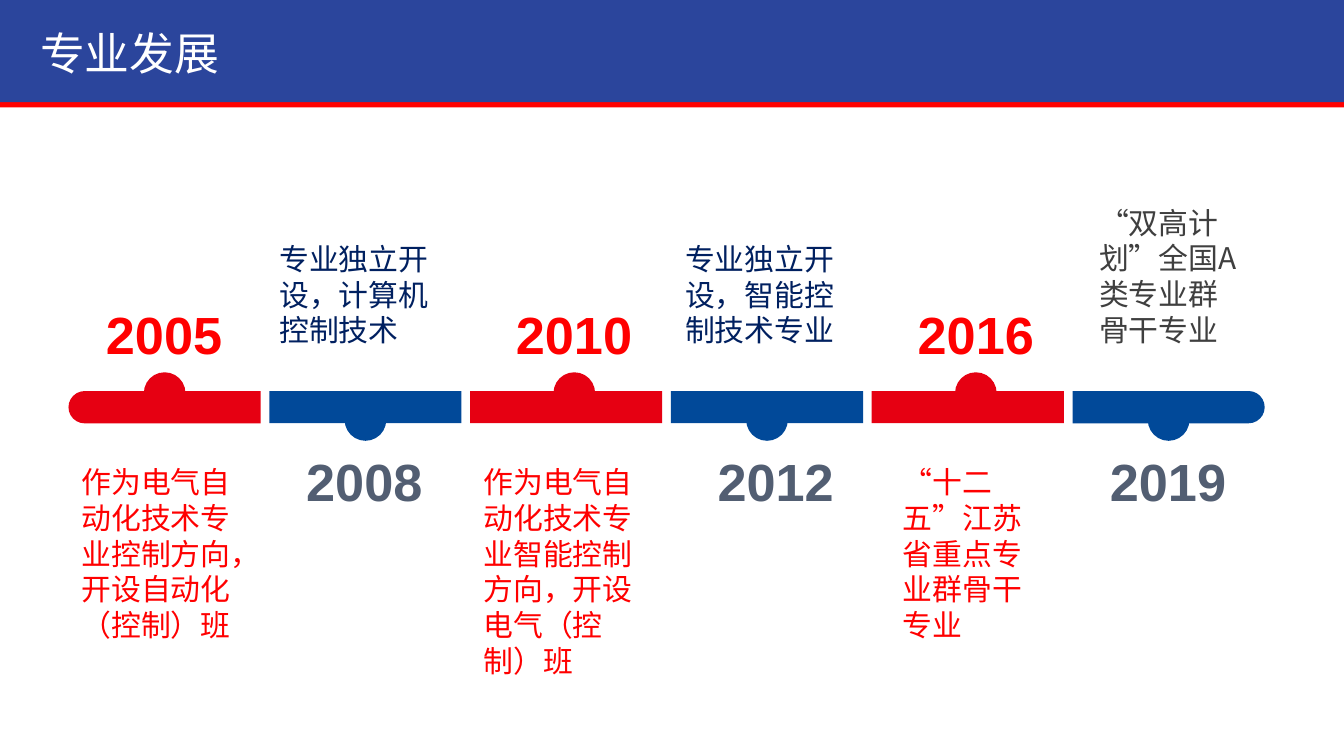
from pptx import Presentation
from pptx.dml.color import RGBColor
from pptx.enum.shapes import MSO_SHAPE
from pptx.oxml.ns import qn
from pptx.util import Inches, Pt
from lxml import etree

RECT = MSO_SHAPE.RECTANGLE
ROUND_END = MSO_SHAPE.ROUND_2_SAME_RECTANGLE
OVAL = MSO_SHAPE.OVAL
LATIN, CHINESE = "Arial", "Noto Sans CJK SC"
COLORS = {
    "header": "2B459C", "rule": "FF0000", "white": "FFFFFF",
    "red_bar": "E60012", "blue_bar": "014999",
    "red": "FF0000", "slate": "525E72", "navy": "002060", "gray": "3F3F3F",
}
BAR_WIDTH, BAR_HEIGHT, DOT_SIZE = 1.43, 0.24, 0.31

MILESTONES = [
    ("2005", 0.18, 0, "作为电气自动化技术专业控制方向，开设自动化（控制）班", 0, 0.49, 1.43, 1.45, "red"),
    ("2008", 1.67, 0, "专业独立开设，计算机控制技术", 1.47, -1.17, 1.43, 0.91, "navy"),
    ("2010", 3.23, 0.06, "作为电气自动化技术专业智能控制方向，开设电气（控制）班", 2.99, 0.49, 1.43, 1.72, "red"),
    ("2012", 4.73, 0, "专业独立开设，智能控制技术专业", 4.49, -1.17, 1.43, 0.91, "navy"),
    ("2016", 6.22, 0.06, "“十二五”江苏省重点专业群骨干专业", 6.11, 0.49, 1.3, 1.18, "red"),
    ("2019", 7.65, 0, "“双高计划”全国A类专业群骨干专业", 7.57, -1.44, 1.25, 1.18, "gray"),
]


def add_block(page, kind, left, top, width, height, color):
    block = page.shapes.add_shape(kind, Inches(left), Inches(top), Inches(width), Inches(height))
    block.shadow.inherit = False
    block.fill.solid()
    block.fill.fore_color.rgb = RGBColor.from_string(COLORS[color])
    block.line.fill.background()
    return block


def add_text(page, text, left, top, width, height, size, color, font, bold=False, wrap=True):
    box = page.shapes.add_textbox(Inches(left), Inches(top), Inches(width), Inches(height))
    box.text_frame.word_wrap = wrap
    box.text_frame.text = text
    para = box.text_frame.paragraphs[0]
    span = para.runs[0]
    span.font.name = font
    span.font.size = Pt(size)
    span.font.bold = bold
    span.font.color.rgb = RGBColor.from_string(COLORS[color])
    if not bold:
        para.line_spacing = Pt(size * 1.2)
        properties = span.font._element
        properties.set("lang", "zh-CN")
        etree.SubElement(properties, qn("a:ea")).set("typeface", CHINESE)


def add_header(page, left, top, width, height):
    add_block(page, RECT, left, top + 0.04, width, height, "rule")
    add_block(page, RECT, left - 0.01, top, width, height, "header")
    add_text(page, "专业发展", left + 0.2, top + 0.14, 7.9, 0.5, 24, "white", LATIN)


def add_bar(page, left, top, color, turn):
    if turn is None:
        add_block(page, RECT, left, top, BAR_WIDTH, BAR_HEIGHT, color)
        return
    inset = (BAR_WIDTH - BAR_HEIGHT) / 2
    bar = add_block(page, ROUND_END, left + inset, top - inset, BAR_HEIGHT, BAR_WIDTH, color)
    bar.adjustments[0] = 0.5
    bar.adjustments[1] = 0
    bar.rotation = turn


def add_timeline(page, left, top, width):
    last = len(MILESTONES) - 1
    step = (width - BAR_WIDTH) / last
    turns = {0: 270, last: 90}
    for index, milestone in enumerate(MILESTONES):
        year, year_left, dot_shift, note, note_left, note_top, note_width, note_height, note_color = milestone
        above = index % 2 == 0
        bar_color = "red_bar" if above else "blue_bar"
        bar_left = left + index * step
        dot_left = bar_left + (BAR_WIDTH - DOT_SIZE) / 2 + dot_shift
        dot_top = top - 0.14 if above else top + 0.06
        add_bar(page, bar_left, top, bar_color, turns.get(index))
        add_block(page, OVAL, dot_left, dot_top, DOT_SIZE, DOT_SIZE, bar_color)
        add_text(page, year, left + year_left, top - 0.71 if above else top + 0.38, 1.08, 0.57,
                 28, "red" if above else "slate", LATIN, bold=True, wrap=False)
        add_text(page, note, left + note_left, top + note_top, note_width, note_height,
                 16, note_color, CHINESE)


def main():
    deck = Presentation()
    deck.slide_width = Inches(10)
    deck.slide_height = Inches(10 * 9 / 16)
    page = deck.slides.add_slide(deck.slide_layouts[6])
    add_header(page, 0, 0, 10.03, 0.76)
    add_timeline(page, 0.51, 2.91, 8.9)
    deck.save("out.pptx")


if __name__ == "__main__":
    main()
